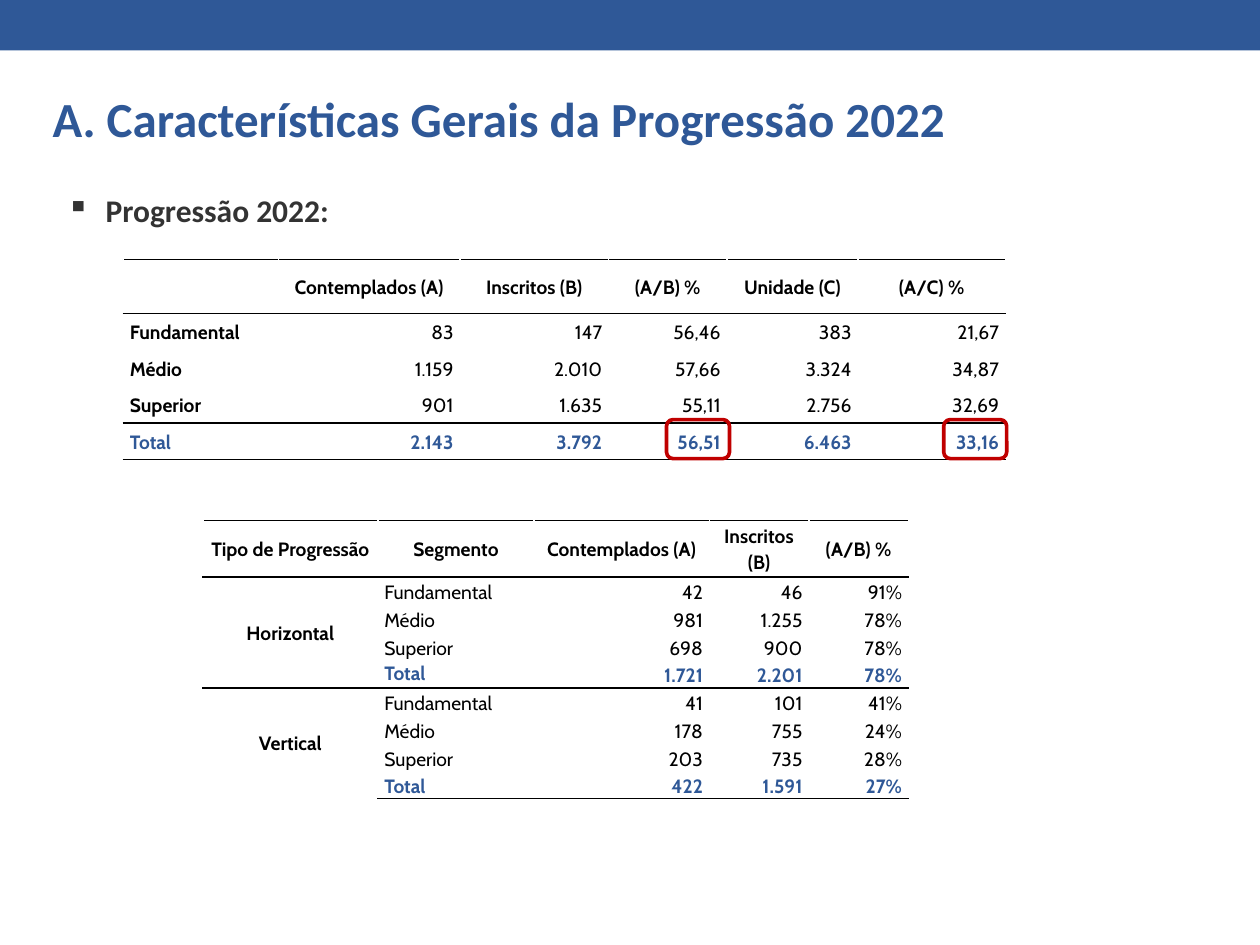
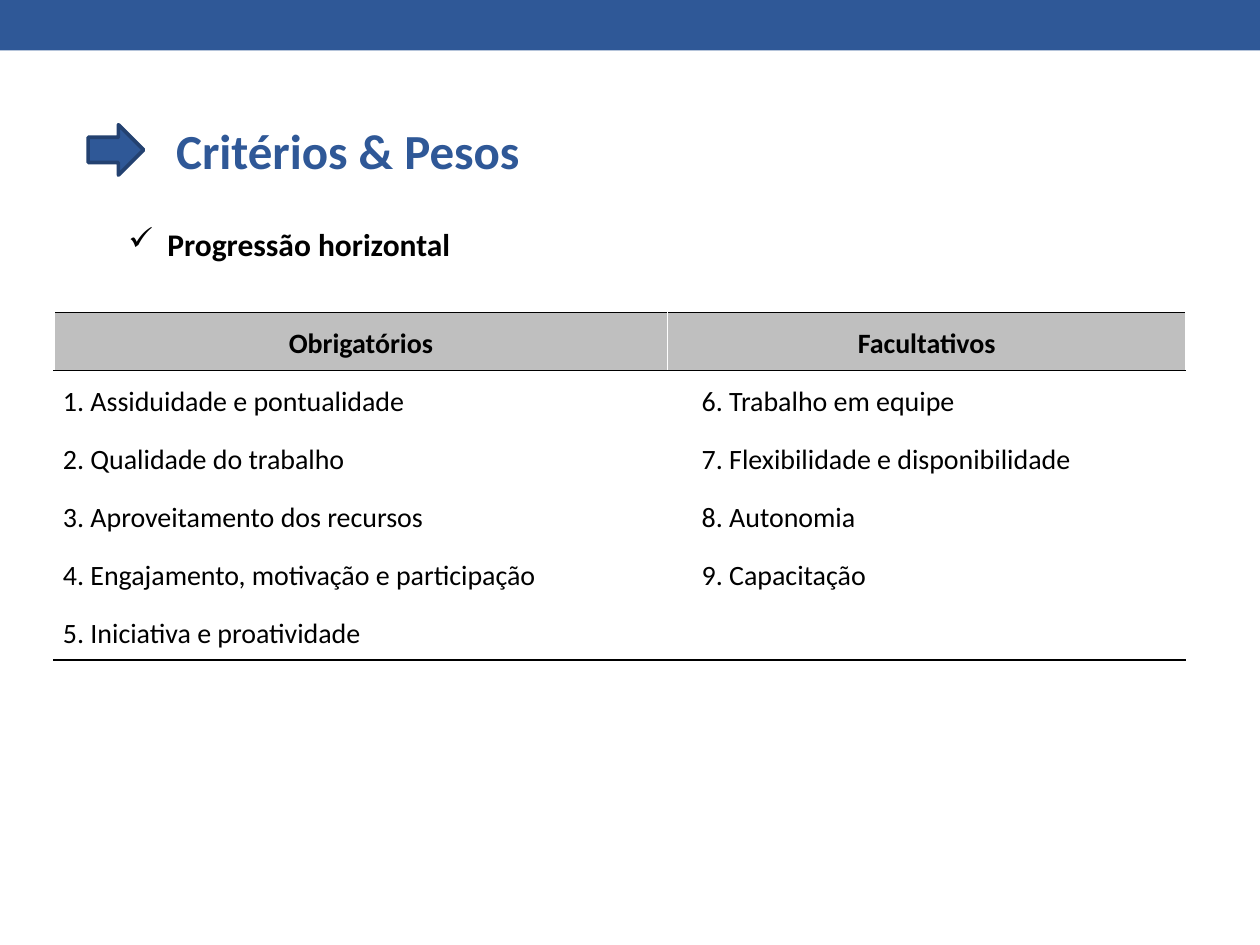
from lxml import etree
from pptx import Presentation
from pptx.dml.color import RGBColor
from pptx.enum import shapes, text
from pptx.oxml.ns import qn
from pptx.util import Inches, Pt

BLUE = RGBColor(0x2F, 0x58, 0x97)
DARK_BLUE = RGBColor(0x23, 0x41, 0x70)
RED = RGBColor(0xC0, 0, 0)
BLACK = RGBColor(0, 0, 0)
WHITE = RGBColor(0xFF, 0xFF, 0xFF)
DARK_GRAY = RGBColor(0x33, 0x33, 0x33)
GRAY = RGBColor(0xBF, 0xBF, 0xBF)

LEFT, CENTER, RIGHT = text.PP_ALIGN.LEFT, text.PP_ALIGN.CENTER, text.PP_ALIGN.RIGHT
TOP, MIDDLE, BOTTOM = (text.MSO_ANCHOR.TOP, text.MSO_ANCHOR.MIDDLE,
                       text.MSO_ANCHOR.BOTTOM)

# Content
SUMMARY = [
    ("", "Contemplados (A)", "Inscritos (B)", "(A/B) %", "Unidade (C)", "(A/C) %"),
    ("Fundamental", "83", "147", "56,46", "383", "21,67"),
    ("Médio", "1.159", "2.010", "57,66", "3.324", "34,87"),
    ("Superior", "901", "1.635", "55,11", "2.756", "32,69"),
    ("Total", "2.143", "3.792", "56,51", "6.463", "33,16"),
]
BY_TYPE = [
    ("Tipo de Progressão", "Segmento", "Contemplados (A)", "Inscritos (B)", "(A/B) %"),
    ("Horizontal", "Fundamental", "42", "46", "91%"),
    ("", "Médio", "981", "1.255", "78%"),
    ("", "Superior", "698", "900", "78%"),
    ("", "Total", "1.721", "2.201", "78%"),
    ("Vertical", "Fundamental", "41", "101", "41%"),
    ("", "Médio", "178", "755", "24%"),
    ("", "Superior", "203", "735", "28%"),
    ("", "Total", "422", "1.591", "27%"),
]
CRITERIA = [
    ("Obrigatórios", "Facultativos"),
    ("1. Assiduidade e pontualidade", "6. Trabalho em equipe"),
    ("2. Qualidade do trabalho", "7. Flexibilidade e disponibilidade"),
    ("3. Aproveitamento dos recursos", "8. Autonomia"),
    ("4. Engajamento, motivação e participação", "9. Capacitação"),
    ("5. Iniciativa e proatividade", ""),
]

# Formats
TITLE = dict(name="Calibri", size=Pt(28), bold=True)
SUBTITLE = dict(name="Calibri", size=Pt(18), bold=True)
FIGURES = dict(name="Cabin", size=Pt(11))
CRITERION = dict(name="Calibri", size=Pt(16))


def set_all(target, values):
    for name, value in values.items():
        setattr(target, name, value)


def write(p, words, font, color):
    r = p.add_run()
    r.text = words
    set_all(r.font, font)
    r.font.color.rgb = color


def add_shape(slide, kind, box, fill=None, line=None):
    sp = slide.shapes.add_shape(kind, *map(Inches, box))
    sp.shadow.inherit = False
    if fill is None:
        sp.fill.background()
    else:
        sp.fill.solid()
        sp.fill.fore_color.rgb = fill
    if line is None:
        sp.line.fill.background()
    else:
        sp.line.color.rgb = line
        sp.line.width = Pt(2.08)


def add_text(slide, box, words, font, color, bullet=None, wrap=True, spacing=0):
    tf = slide.shapes.add_textbox(*map(Inches, box)).text_frame
    set_all(tf, dict(word_wrap=wrap, auto_size=text.MSO_AUTO_SIZE.SHAPE_TO_FIT_TEXT))
    p = tf.paragraphs[0]
    if spacing:
        set_all(p, dict(space_before=Pt(spacing), space_after=Pt(spacing)))
    write(p, words, font, color)
    if bullet:
        pPr = p._p.get_or_add_pPr()
        indent = Inches(0.31)
        pPr.set("marL", str(indent))
        pPr.set("indent", str(-indent))
        etree.SubElement(pPr, qn("a:buChar")).set("char", bullet)


def set_borders(cell, top, bottom):
    tcPr = cell._tc.get_or_add_tcPr()
    sides = dict(lnL=WHITE, lnR=WHITE, lnT=top, lnB=bottom)
    for side, color in sides.items():
        ln = etree.SubElement(tcPr, qn("a:" + side), w=str(Pt(1)))
        fill = etree.SubElement(ln, qn("a:solidFill"))
        etree.SubElement(fill, qn("a:srgbClr"), val=str(color))


def add_table(slide, left, top, widths, heights, rows, font, rules, style,
              line_spacing, inset):
    """Black lines lie on the row boundaries in rules; style(i, j) formats a cell."""
    table = slide.shapes.add_table(
        len(rows), len(widths), Inches(left), Inches(top),
        Inches(sum(widths)), Inches(sum(heights))).table
    set_all(table, dict(first_row=False, horz_banding=False))
    for column, width in zip(table.columns, widths):
        column.width = Inches(width)
    for row, height in zip(table.rows, heights):
        row.height = Inches(height)
    for i, row in enumerate(rows):
        edges = [BLACK if k in rules else WHITE for k in (i, i + 1)]
        for j, words in enumerate(row):
            look = dict(align=LEFT, anchor=MIDDLE, bold=False, color=BLACK,
                        fill=WHITE, extra=0)
            look.update(style(i, j))
            cell = table.cell(i, j)
            set_borders(cell, *edges)
            cell.fill.solid()
            cell.fill.fore_color.rgb = look["fill"]
            set_all(cell, dict(
                margin_left=Inches(inset + look["extra"]), margin_right=Inches(inset),
                margin_top=0, margin_bottom=0, vertical_anchor=look["anchor"]))
            if words:
                p = cell.text_frame.paragraphs[0]
                set_all(p, dict(alignment=look["align"], line_spacing=line_spacing,
                                space_after=Pt(8)))
                write(p, words, dict(font, bold=look["bold"]), look["color"])
    return table


# Cell styles
def summary_style(i, j):
    if i == 0:
        return dict(align=CENTER, bold=True)
    total = i == len(SUMMARY) - 1
    return dict(align=RIGHT if j else LEFT, bold=total or j == 0,
                color=BLUE if total else BLACK)


def by_type_style(i, j):
    if i == 0 or j == 0:
        return dict(align=CENTER, bold=True)
    total = BY_TYPE[i][1] == "Total"
    return dict(align=RIGHT if j > 1 else LEFT, bold=total,
                color=BLUE if total else BLACK,
                anchor=TOP if (i, j) == (4, 1) else BOTTOM)


def criteria_style(i, j):
    if i == 0:
        return dict(align=CENTER, bold=True, fill=GRAY)
    return dict(extra=0.2 * j)


def new_slide(prs):
    slide = prs.slides.add_slide(prs.slide_layouts[6])
    add_shape(slide, shapes.MSO_SHAPE.RECTANGLE, (0, 0, 10, 0.4), BLUE)
    return slide


def progression_slide(prs):
    slide = new_slide(prs)
    add_text(slide, (0.32, 0.65, 7.47, 0.57),
             "A. Características Gerais da Progressão 2022", TITLE, BLUE,
             wrap=False, spacing=12)
    add_text(slide, (0.43, 1.47, 8.9, 0.4), "Progressão 2022:", SUBTITLE, DARK_GRAY,
             bullet="▪")
    add_table(slide, 0.98, 2.06, [1.23, 1.44, 1.18, 0.94, 1.04, 1.17],
              [0.43] + [0.29] * 4, SUMMARY, FIGURES, {0, 1, 4, 5}, summary_style,
              1.07, 0.05)
    # Highlights on the total percentages
    for left in (5.29, 7.49):
        add_shape(slide, shapes.MSO_SHAPE.ROUNDED_RECTANGLE, (left, 3.33, 0.5, 0.31),
                  line=RED)
    table = add_table(slide, 1.61, 4.13, [1.39, 1.24, 1.39, 0.79, 0.79],
                      [0.45] + [0.22] * 8, BY_TYPE, FIGURES, {0, 1, 5, 9},
                      by_type_style, 1.07, 0.05)
    for first in (1, 5):
        table.cell(first, 0).merge(table.cell(first + 3, 0))


def criteria_slide(prs):
    slide = new_slide(prs)
    add_shape(slide, shapes.MSO_SHAPE.RIGHT_ARROW, (0.7, 0.99, 0.44, 0.4), BLUE,
              DARK_BLUE)
    add_text(slide, (1.3, 0.91, 3.23, 0.57), "Critérios & Pesos", TITLE, BLUE)
    add_table(slide, 0.43, 2.48, [4.87, 4.11], [0.46] * 6, CRITERIA, CRITERION,
              {0, 1, 6}, criteria_style, 1.15, 0.07)
    add_text(slide, (0.92, 1.74, 5, 0.4), "Progressão horizontal", SUBTITLE, BLACK,
             bullet="✓")


def main():
    prs = Presentation()
    set_all(prs, dict(slide_width=Inches(10), slide_height=Inches(7.5)))
    progression_slide(prs)
    criteria_slide(prs)
    prs.save("out.pptx")


if __name__ == "__main__":
    main()
